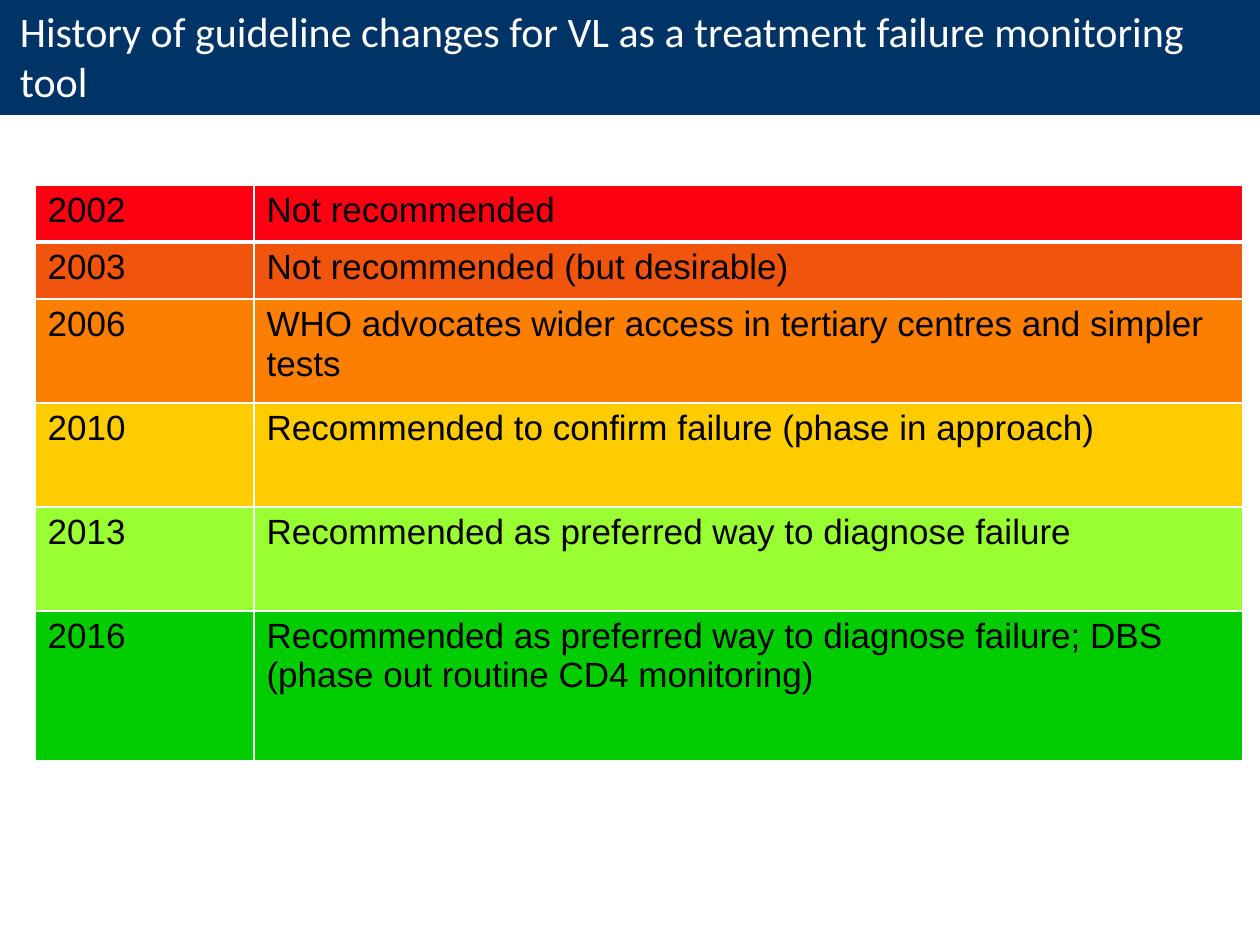
from dataclasses import dataclass

from lxml import etree
from pptx import Presentation
from pptx.dml.color import RGBColor
from pptx.enum import shapes, text
from pptx.oxml import ns
from pptx.util import Emu, Pt

PX = 914400 / 126
PAGE_WIDTH, PAGE_HEIGHT = 1260, 945
WHITE, BLACK, NAVY = "FFFFFF", "000000", "003366"
COLUMN_WIDTHS = (219, 989)
TABLE_LEFT, TABLE_TOP = 35, 185


@dataclass(frozen=True)
class Guideline:
    year: str
    advice: str
    fill: str
    height: int


GUIDELINES = (
    Guideline("2002", "Not recommended", "FD0113", 57),
    Guideline("2003", "Not recommended (but desirable)", "F1540D", 57),
    Guideline("2006", "WHO advocates wider access in tertiary centres and simpler tests",
              "FD7F01", 104),
    Guideline("2010", "Recommended to confirm failure (phase in approach)", "FFCC00", 104),
    Guideline("2013", "Recommended as preferred way to diagnose failure", "99FF33", 104),
    Guideline("2016", "Recommended as preferred way to diagnose failure; DBS "
              "(phase out routine CD4 monitoring)", "00CC00", 150),
)


def px(length: int) -> Emu:
    return Emu(round(length * PX))


def colour(value: str) -> RGBColor:
    return RGBColor.from_string(value)


def write(frame, words: str, font: str, size: int, ink: str) -> None:
    frame.text = words
    para = frame.paragraphs[0]
    para.alignment = text.PP_ALIGN.LEFT
    for span in para.runs:
        span.font.name = font
        span.font.size = Pt(size)
        span.font.bold = False
        span.font.color.rgb = colour(ink)


def add_border(cell, side: str, points: int) -> None:
    line = etree.SubElement(cell._tc.get_or_add_tcPr(), ns.qn(f"a:ln{side}"), w=str(Pt(points)))
    solid = etree.SubElement(line, ns.qn("a:solidFill"))
    etree.SubElement(solid, ns.qn("a:srgbClr"), val=WHITE)


def add_title(page, words: str) -> None:
    banner = page.shapes.add_shape(
        shapes.MSO_SHAPE.RECTANGLE, px(0), px(-4), px(PAGE_WIDTH), px(119))
    banner.shadow.inherit = False
    banner.fill.solid()
    banner.fill.fore_color.rgb = colour(NAVY)
    banner.line.fill.background()
    frame = banner.text_frame
    frame.word_wrap = True
    frame.vertical_anchor = text.MSO_ANCHOR.MIDDLE
    frame.margin_left = px(20)
    write(frame, words, "Calibri", 24, WHITE)


def add_guideline_table(page, guidelines: tuple[Guideline, ...]) -> None:
    table = page.shapes.add_table(
        len(guidelines), len(COLUMN_WIDTHS), px(TABLE_LEFT), px(TABLE_TOP),
        px(sum(COLUMN_WIDTHS)), px(sum(item.height for item in guidelines))).table
    table.first_row = table.horz_banding = False
    for column, width in zip(table.columns, COLUMN_WIDTHS):
        column.width = px(width)

    for index, item in enumerate(guidelines):
        table.rows[index].height = px(item.height)
        # A thicker rule separates the first two rows
        borders = {"L": 1, "R": 1, "T": 3 if index == 1 else 1, "B": 3 if index == 0 else 1}
        for cell, words in zip(table.rows[index].cells, (item.year, item.advice)):
            for side, points in borders.items():
                add_border(cell, side, points)
            cell.fill.solid()
            cell.fill.fore_color.rgb = colour(item.fill)
            write(cell.text_frame, words, "Arial", 20, BLACK)


def main() -> None:
    deck = Presentation()
    deck.slide_width, deck.slide_height = px(PAGE_WIDTH), px(PAGE_HEIGHT)
    page = deck.slides.add_slide(deck.slide_layouts[6])

    # Title banner
    add_title(page, "History of guideline changes for VL as a treatment failure monitoring tool")

    # Guideline history, from red to green
    add_guideline_table(page, GUIDELINES)

    deck.save("out.pptx")


if __name__ == "__main__":
    main()
